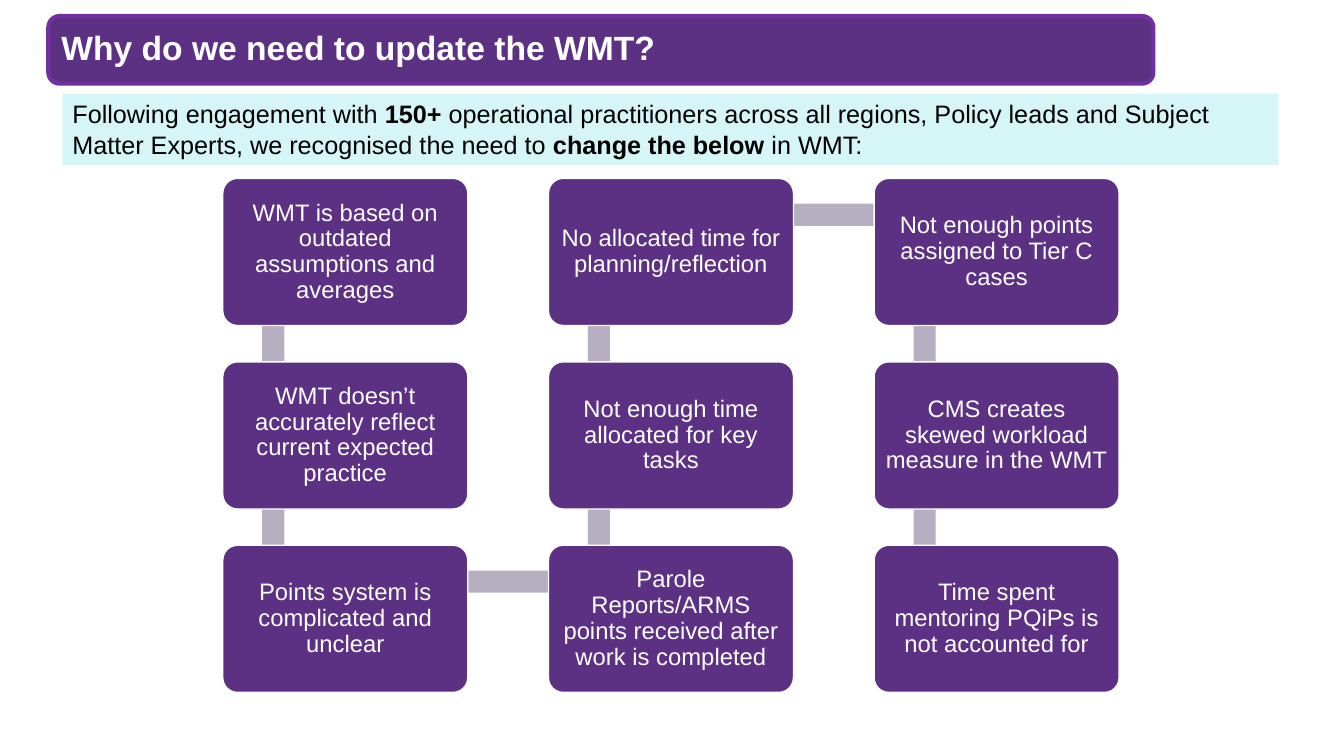
from pptx import Presentation
from pptx.dml.color import RGBColor
from pptx.enum.shapes import MSO_SHAPE
from pptx.enum.text import MSO_ANCHOR, MSO_AUTO_SIZE, PP_ALIGN
from pptx.util import Inches, Pt

PURPLE = "5C3183"
WHITE = "FFFFFF"
GRID_LEFT, GRID_TOP = 2.21, 1.77
COLUMN_STEP, ROW_STEP = 3.23, 1.82
BOX_WIDTH, BOX_HEIGHT = 2.43, 1.46
LINK_X, LINK_Y, LINK_THICKNESS = 0.5, 0.36, 0.22

REASON_PATH = [
    (0, 0, "WMT is based on outdated assumptions and averages"),
    (0, 1, "WMT doesn’t accurately reflect current expected practice"),
    (0, 2, "Points system is complicated and unclear"),
    (1, 2, "Parole Reports/ARMS points received after work is completed"),
    (1, 1, "Not enough time allocated for key tasks"),
    (1, 0, "No allocated time for planning/reflection"),
    (2, 0, "Not enough points assigned to Tier C cases"),
    (2, 1, "CMS creates skewed workload measure in the WMT"),
    (2, 2, "Time spent mentoring PQiPs is not accounted for"),
]


def color(hex_string):
    return RGBColor.from_string(hex_string)


def write_text(shape, runs, size, font_color=WHITE, align=PP_ALIGN.LEFT,
               anchor=MSO_ANCHOR.MIDDLE, line_spacing=0.9, insets=(0.1, 0.1)):
    frame = shape.text_frame
    frame.word_wrap = True
    frame.auto_size = MSO_AUTO_SIZE.NONE
    frame.vertical_anchor = anchor
    frame.margin_left = frame.margin_right = Inches(insets[0])
    frame.margin_top = frame.margin_bottom = Inches(insets[1])
    paragraph = frame.paragraphs[0]
    paragraph.alignment = align
    paragraph.line_spacing = line_spacing
    paragraph.space_before = Pt(0)
    for text, bold in runs:
        run = paragraph.add_run()
        run.text = text
        run.font.name = "Arial"
        run.font.size = Pt(size)
        run.font.bold = bold
        run.font.color.rgb = color(font_color)


def add_block(slide, kind, left, top, width, height, fill, line=None, line_width=1):
    shape = slide.shapes.add_shape(
        kind, Inches(left), Inches(top), Inches(width), Inches(height))
    shape.shadow.inherit = False
    shape.fill.solid()
    shape.fill.fore_color.rgb = color(fill)
    if line:
        shape.line.color.rgb = color(line)
        shape.line.width = Pt(line_width)
    else:
        shape.line.fill.background()
    return shape


def grid_position(column, row):
    return GRID_LEFT + column * COLUMN_STEP, GRID_TOP + row * ROW_STEP


def add_link(slide, start, end):
    start_left, start_top = grid_position(*start)
    end_left, end_top = grid_position(*end)
    length = abs(end_left - start_left) + abs(end_top - start_top)
    center_x = (start_left + end_left) / 2 + LINK_X
    center_y = (start_top + end_top) / 2 + LINK_Y
    link = add_block(slide, MSO_SHAPE.RECTANGLE, center_x - length / 2,
                     center_y - LINK_THICKNESS / 2, length, LINK_THICKNESS, "B6AEC1")
    if end_top != start_top:
        link.rotation = 90 if end_top > start_top else 270


def add_reason(slide, column, row, text):
    left, top = grid_position(column, row)
    box = add_block(slide, MSO_SHAPE.ROUNDED_RECTANGLE, left, top,
                    BOX_WIDTH, BOX_HEIGHT, PURPLE, line=WHITE)
    box.adjustments[0] = 0.1
    write_text(box, [(text, False)], 17, align=PP_ALIGN.CENTER, insets=(0.07, 0.07))


def add_title(slide, text):
    add_block(slide, MSO_SHAPE.ROUNDED_RECTANGLE, 0.48, 0.16, 10.96, 0.67,
              PURPLE, line="7030A0", line_width=3)
    title = slide.shapes.title
    title.left, title.top = Inches(0.51), Inches(0.19)
    title.width, title.height = Inches(10.9), Inches(0.6)
    write_text(title, [(text, True)], 24)
    slide.shapes.element.append(title.element)


def add_introduction(slide, runs):
    banner = add_block(slide, MSO_SHAPE.RECTANGLE, 0.62, 0.93, 12.06, 0.71, "D5F5F6")
    write_text(banner, runs, 18, font_color="000000", anchor=MSO_ANCHOR.TOP,
               line_spacing=1.0, insets=(0.1, 0.05))


def main():
    presentation = Presentation()
    presentation.slide_width = Inches(13.33)
    presentation.slide_height = Inches(7.5)
    slide = presentation.slides.add_slide(presentation.slide_layouts[5])
    add_introduction(slide, [
        ("Following engagement with ", False),
        ("150+", True),
        (" operational practitioners across all regions, Policy leads and Subject "
         "Matter Experts, we recognised the need to ", False),
        ("change the below ", True),
        ("in WMT:", False),
    ])
    for start, end in zip(REASON_PATH, REASON_PATH[1:]):
        add_link(slide, start[:2], end[:2])
    for column, row, text in REASON_PATH:
        add_reason(slide, column, row, text)
    add_title(slide, "Why do we need to update the WMT?")
    presentation.save("out.pptx")


if __name__ == "__main__":
    main()
